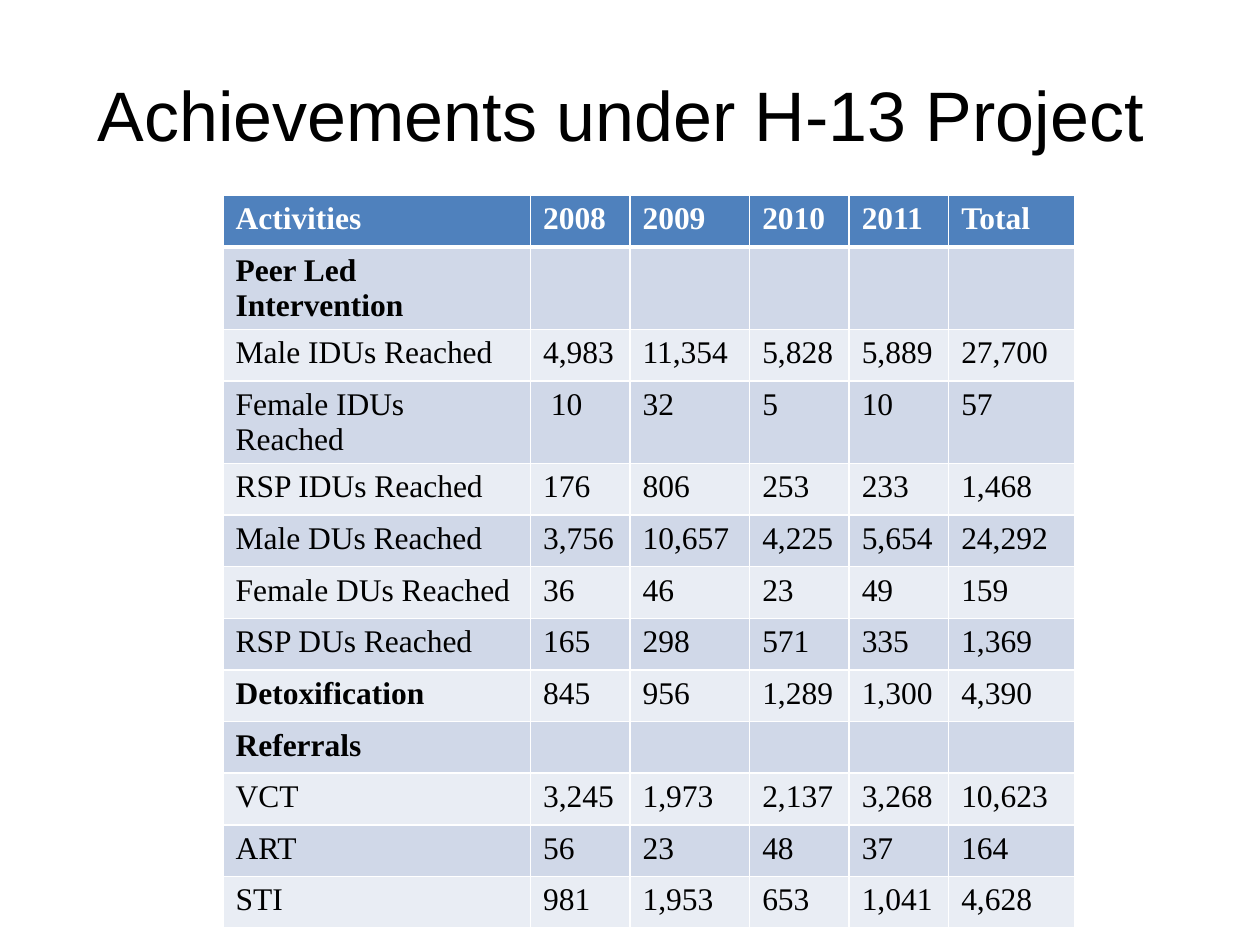
from dataclasses import dataclass

from lxml import etree
from pptx import Presentation
from pptx import util as u
from pptx.dml.color import RGBColor as Rgb
from pptx.enum import text
from pptx.oxml import ns


@dataclass(frozen=True)
class Theme:
    ink: str = "000000"
    white: str = "FFFFFF"
    head: str = "4F81BD"
    dark: str = "D0D8E8"
    light: str = "E9EDF4"
    title: int = 40
    body: int = 18
    sans: str = "Arial"
    serif: str = "Times New Roman"


theme = Theme()


def add_run(para, words, face, size, color, bold=False):
    run = para.add_run()
    run.text = words
    run.font.name = face
    run.font.size = u.Pt(size)
    run.font.bold = bold
    run.font.color.rgb = Rgb.from_string(color)


def add_edge(cell, side, width):
    line = etree.SubElement(cell._tc.get_or_add_tcPr(), ns.qn(f"a:ln{side}"), w=str(u.Pt(width)))
    fill = etree.SubElement(line, ns.qn("a:solidFill"))
    etree.SubElement(fill, ns.qn("a:srgbClr"), val=theme.white)


deck = Presentation()
deck.slide_width = u.Inches(10)
deck.slide_height = u.Inches(7.5)
slide = deck.slides.add_slide(deck.slide_layouts[5])

title = slide.shapes.title
title.left, title.top = u.Inches(0.55), u.Inches(0.55)
title.width, title.height = u.Inches(8.75), u.Inches(0.7)
title.text_frame.vertical_anchor = text.MSO_ANCHOR.MIDDLE
para = title.text_frame.paragraphs[0]
para.alignment = text.PP_ALIGN.CENTER
add_run(para, "Achievements under H-13 Project", theme.sans, theme.title, theme.ink)

rows = [
    ("Activities", "2008", "2009", "2010", "2011", "Total"),
    ("Peer Led Intervention", "", "", "", "", ""),
    ("Male IDUs Reached", "4,983", "11,354", "5,828", "5,889", "27,700"),
    ("Female IDUs Reached", " 10", "32", "5", "10", "57"),
    ("RSP IDUs Reached", "176", "806", "253", "233", "1,468"),
    ("Male DUs Reached", "3,756", "10,657", "4,225", "5,654", "24,292"),
    ("Female DUs Reached", "36", "46", "23", "49", "159"),
    ("RSP DUs Reached", "165", "298", "571", "335", "1,369"),
    ("Detoxification", "845", "956", "1,289", "1,300", "4,390"),
    ("Referrals", "", "", "", "", ""),
    ("VCT", "3,245", "1,973", "2,137", "3,268", "10,623"),
    ("ART", "56", "23", "48", "37", "164"),
    ("STI", "981", "1,953", "653", "1,041", "4,628"),
]
groups = {"Peer Led Intervention", "Detoxification", "Referrals"}
widths = [2.44, 0.79, 0.95, 0.79, 0.79, 1]

frame = slide.shapes.add_table(
    len(rows), len(widths), u.Inches(1.77), u.Inches(1.55), u.Inches(6.75), u.Inches(5.27))
table = frame.table
for col, width in zip(table.columns, widths):
    col.width = u.Inches(width)

for r, row in enumerate(rows):
    table.rows[r].height = u.Inches(0.41)
    fill = theme.head if r == 0 else theme.dark if r % 2 else theme.light
    color = theme.white if r == 0 else theme.ink
    for c, words in enumerate(row):
        cell = table.cell(r, c)
        for side in "LRTB":
            heavy = (r, side) in {(0, "B"), (1, "T")}
            add_edge(cell, side, 3 if heavy else 1)
        cell.fill.solid()
        cell.fill.fore_color.rgb = Rgb.from_string(fill)
        if words:
            bold = r == 0 or words in groups
            add_run(cell.text_frame.paragraphs[0], words, theme.serif, theme.body, color, bold)

deck.save("out.pptx")
